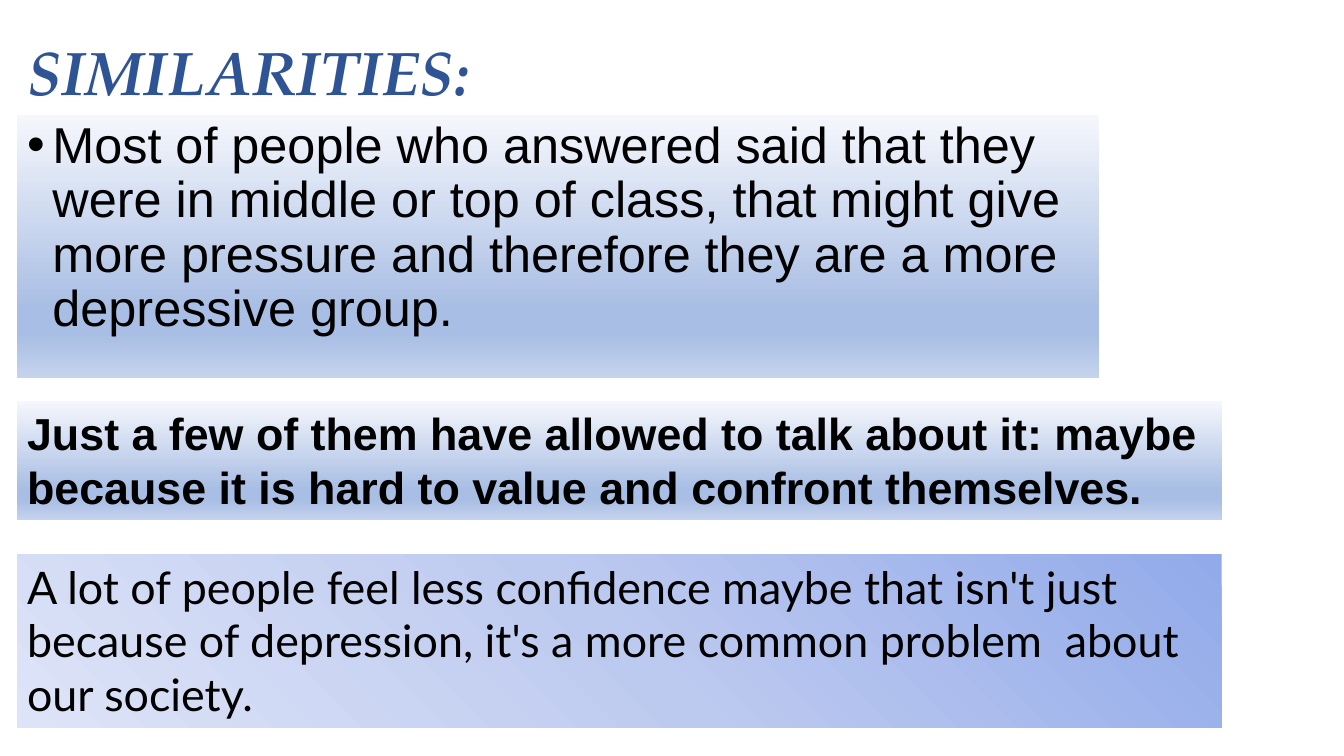
import pptx
import pptx.util
import pptx.dml.color
import pptx.enum.text
import pptx.oxml
import pptx.oxml.ns

Pt = pptx.util.Pt
ANCHOR = pptx.enum.text.MSO_ANCHOR

SLIDE_SIZE = (960, 540)
LEFT = 12.24
BULLET_INDENT = 18

SOFT_BLUE = {"angle": 90, "stops": [(0, "F5F7FC"), (74, "A9BEE4"), (83, "A9BEE4"), (100, "C5D3ED")]}
DIAGONAL_BLUE = {"angle": 45, "stops": [(0, "92AAEA"), (50, "BDCAF0"), (100, "DEE4F7")]}

TITLE = {
    "text": "SIMILARITIES:", "box": (3.6, 359.28, 100.8), "anchor": ANCHOR.MIDDLE, "spacing": 0.9,
    "font": ("TeX Gyre Pagella", 44, "2F5496", True, True),
}
PRESSURE = {
    "text": "Most of people who answered said that they were in middle or top of class, "
            "that might give more pressure and therefore they are a more depressive group.",
    "box": (82.08, 772.56, 187.92), "anchor": ANCHOR.TOP, "spacing": 0.9,
    "font": ("Arial", 36, "000000", False, False), "gradient": SOFT_BLUE,
}
TALKING = {
    "text": "Just a few of them have allowed to talk about it: maybe because it is hard "
            "to value and confront themselves.",
    "box": (286.56, 860.4, 84.96), "anchor": ANCHOR.TOP, "spacing": 1.0,
    "font": ("Arial", 32, "000000", True, False), "gradient": SOFT_BLUE,
}
CONFIDENCE = {
    "text": "A lot of people feel less confidence maybe that isn't just because of depression, "
            "it's a more common problem  about our society.",
    "box": (396, 860.4, 123.84), "anchor": ANCHOR.TOP, "spacing": 1.0,
    "font": ("Lato", 32, "000000", False, False), "gradient": DIAGONAL_BLUE,
}


def color(value):
    return pptx.dml.color.RGBColor.from_string(value)


def fill_gradient(shape, gradient):
    stops = "".join(
        f'<a:gs pos="{position * 1000}"><a:srgbClr val="{value}"/></a:gs>'
        for position, value in gradient["stops"]
    )
    shape.fill.gradient()
    properties = shape.element.spPr
    old_fill = properties.find(pptx.oxml.ns.qn("a:gradFill"))
    new_fill = pptx.oxml.parse_xml(
        f'<a:gradFill {pptx.oxml.ns.nsdecls("a")} rotWithShape="1"><a:gsLst>{stops}</a:gsLst>'
        f'<a:lin ang="{gradient["angle"] * 60000}" scaled="0"/></a:gradFill>'
    )
    properties.replace(old_fill, new_fill)


def write_block(shape, block):
    top, width, height = block["box"]
    shape.left, shape.top, shape.width, shape.height = Pt(LEFT), Pt(top), Pt(width), Pt(height)
    frame = shape.text_frame
    frame.word_wrap = True
    frame.auto_size = pptx.enum.text.MSO_AUTO_SIZE.NONE
    frame.vertical_anchor = block["anchor"]
    frame.margin_left = frame.margin_right = Pt(7.2)
    frame.margin_top = frame.margin_bottom = Pt(3.6)
    paragraph = frame.paragraphs[0]
    paragraph.alignment = pptx.enum.text.PP_ALIGN.LEFT
    paragraph.line_spacing = block["spacing"]
    paragraph.space_before = Pt(0)
    run = paragraph.add_run()
    run.text = block["text"]
    font = run.font
    font.name, size, value, font.bold, font.italic = block["font"]
    font.size = Pt(size)
    font.color.rgb = color(value)
    if "gradient" in block:
        fill_gradient(shape, block["gradient"])
    return paragraph


def add_bullet(paragraph):
    properties = paragraph._p.get_or_add_pPr()
    properties.set("marL", str(Pt(BULLET_INDENT)))
    properties.set("indent", str(-Pt(BULLET_INDENT)))
    namespace = pptx.oxml.ns.nsdecls("a")
    for markup in (
        f'<a:buClr {namespace}><a:srgbClr val="000000"/></a:buClr>',
        f'<a:buFont {namespace} typeface="Arial"/>',
        f'<a:buChar {namespace} char="•"/>',
    ):
        properties.append(pptx.oxml.parse_xml(markup))


def main():
    presentation = pptx.Presentation()
    presentation.slide_width, presentation.slide_height = map(Pt, SLIDE_SIZE)
    slide = presentation.slides.add_slide(presentation.slide_layouts[1])
    write_block(slide.shapes.title, TITLE)
    add_bullet(write_block(slide.placeholders[1], PRESSURE))
    for block in (TALKING, CONFIDENCE):
        shape = slide.shapes.add_textbox(0, 0, 0, 0)
        write_block(shape, block)
        if block is CONFIDENCE:
            shape.element.spPr.xfrm.set("flipH", "1")
    presentation.save("out.pptx")


if __name__ == "__main__":
    main()
